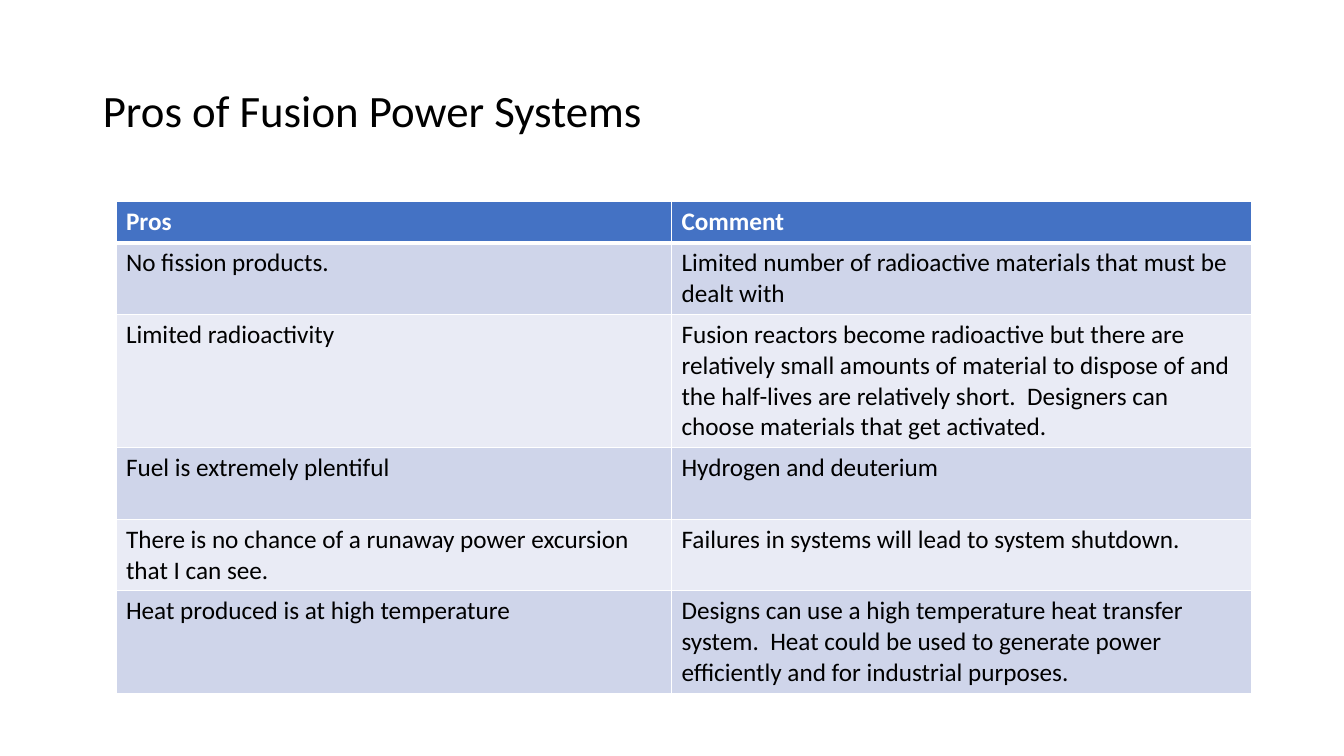
"""Build the slide on the pros of fusion power systems."""
import dataclasses

import lxml.etree
import pptx
import pptx.dml.color
import pptx.enum.text
import pptx.oxml.ns
import pptx.util
from pptx.util import Inches


@dataclasses.dataclass(frozen=True)
class Theme:
    """Hold the font, colours and type sizes of the slide."""
    font: str = "Calibri"
    ink: str = "000000"
    paper: str = "FFFFFF"
    header: str = "4472C4"
    bands: tuple = ("CFD5EA", "E9EBF5")
    title_size: int = 32
    body_size: int = 18
    rule: int = 1
    header_rule: int = 3


THEME = Theme()
TITLE = "Pros of Fusion Power Systems"
HEADINGS = ("Pros", "Comment")
PROS = (
    ("No fission products.",
     "Limited number of radioactive materials that must be dealt with"),
    ("Limited radioactivity",
     "Fusion reactors become radioactive but there are relatively small "
     "amounts of material to dispose of and the half-lives are relatively "
     "short.  Designers can choose materials that get activated."),
    ("Fuel is extremely plentiful", "Hydrogen and deuterium"),
    ("There is no chance of a runaway power excursion that I can see.",
     "Failures in systems will lead to system shutdown."),
    ("Heat produced is at high temperature",
     "Designs can use a high temperature heat transfer system.  Heat could be "
     "used to generate power efficiently and for industrial purposes."),
)
COLUMN_WIDTHS = (5.51, 5.75)
ROW_HEIGHTS = (0.41, 0.71, 1.32, 0.71, 0.71, 1.01)


def write_text(frame, text, *, size=THEME.body_size, color=THEME.ink,
               bold=False, line_spacing=None):
    """Put left-aligned, formatted text into a text frame."""
    paragraph = frame.paragraphs[0]
    paragraph.alignment = pptx.enum.text.PP_ALIGN.LEFT
    if line_spacing:
        paragraph.line_spacing = line_spacing
    run = paragraph.add_run()
    run.text = text
    run.font.name = THEME.font
    run.font.size = pptx.util.Pt(size)
    run.font.bold = bold
    run.font.color.rgb = pptx.dml.color.RGBColor.from_string(color)


def add_title(slide, text):
    """Place and fill the title placeholder."""
    title = slide.shapes.title
    title.left, title.top = Inches(0.92), Inches(0.4)
    title.width, title.height = Inches(11.5), Inches(1.45)
    title.text_frame.auto_size = pptx.enum.text.MSO_AUTO_SIZE.NONE
    title.text_frame.vertical_anchor = pptx.enum.text.MSO_ANCHOR.MIDDLE
    write_text(title.text_frame, text, size=THEME.title_size, line_spacing=0.9)


def set_borders(cell, top, bottom):
    """Rule the four sides of a cell, with widths in points."""
    properties = cell._tc.get_or_add_tcPr()
    widths = {"L": THEME.rule, "R": THEME.rule, "T": top, "B": bottom}
    for position, (side, width) in enumerate(widths.items()):
        line = lxml.etree.Element(pptx.oxml.ns.qn(f"a:ln{side}"),
                                  w=str(pptx.util.Pt(width)))
        fill = lxml.etree.SubElement(line, pptx.oxml.ns.qn("a:solidFill"))
        lxml.etree.SubElement(fill, pptx.oxml.ns.qn("a:srgbClr"),
                              val=THEME.paper)
        properties.insert(position, line)


def fill_cell(cell, text, row):
    """Write and colour one cell according to its row."""
    is_header = row == 0
    write_text(cell.text_frame, text, bold=is_header,
               color=THEME.paper if is_header else THEME.ink)
    color = THEME.header if is_header else THEME.bands[(row - 1) % 2]
    cell.fill.solid()
    cell.fill.fore_color.rgb = pptx.dml.color.RGBColor.from_string(color)
    set_borders(cell, top=THEME.header_rule if row == 1 else THEME.rule,
                bottom=THEME.header_rule if is_header else THEME.rule)


def add_pros_table(slide):
    """Add the table of pros and comments."""
    rows = (HEADINGS, *PROS)
    table = slide.shapes.add_table(
        len(rows), len(HEADINGS), Inches(1.15), Inches(2),
        Inches(sum(COLUMN_WIDTHS)), Inches(sum(ROW_HEIGHTS))).table
    for column, width in zip(table.columns, COLUMN_WIDTHS):
        column.width = Inches(width)
    for row, (texts, height) in enumerate(zip(rows, ROW_HEIGHTS)):
        table.rows[row].height = Inches(height)
        for column, text in enumerate(texts):
            fill_cell(table.cell(row, column), text, row)


def main():
    """Build and save the presentation."""
    presentation = pptx.Presentation()
    presentation.slide_width = Inches(13.33)
    presentation.slide_height = Inches(7.5)
    slide = presentation.slides.add_slide(presentation.slide_layouts[5])
    add_title(slide, TITLE)
    add_pros_table(slide)
    presentation.save("out.pptx")


if __name__ == "__main__":
    main()
